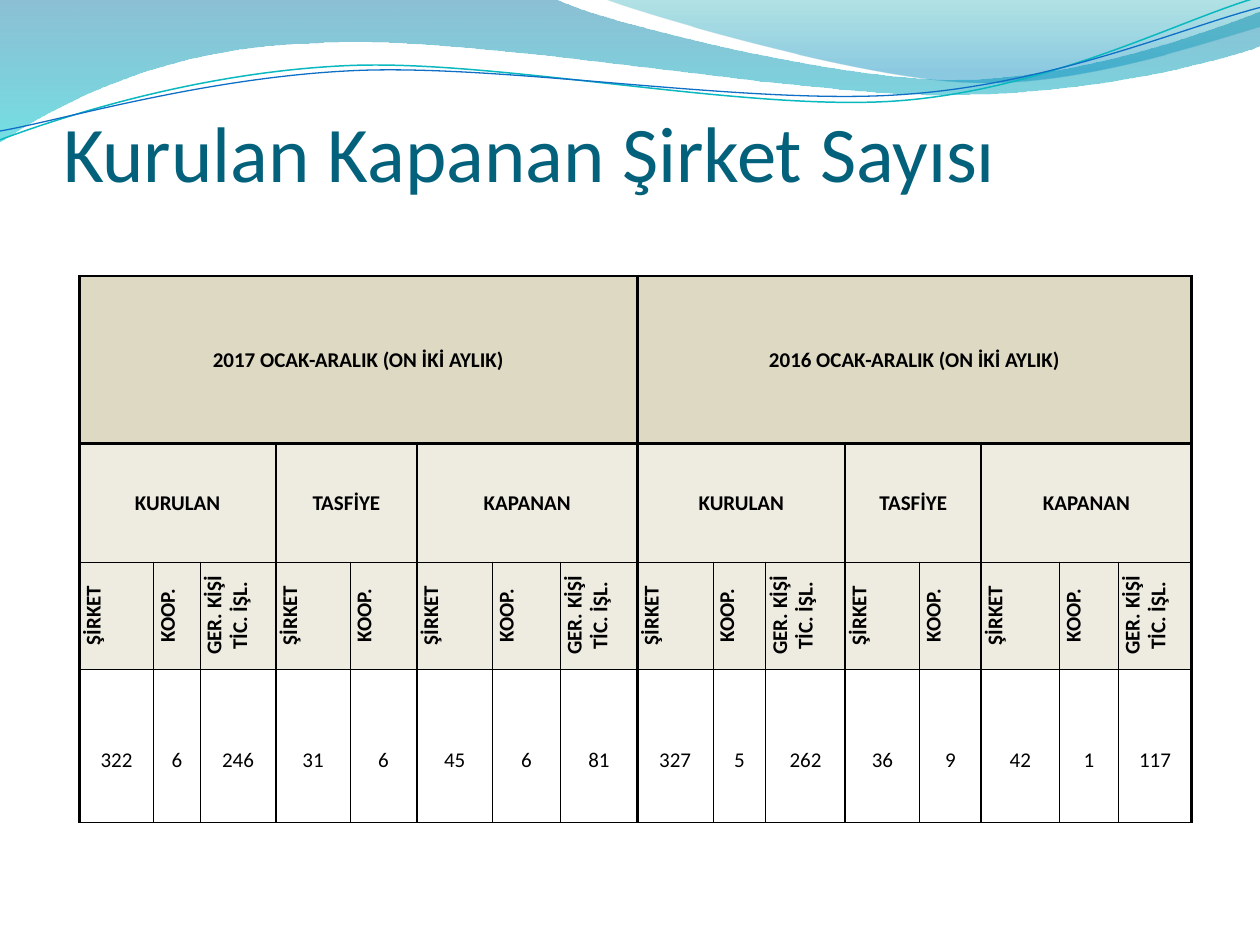
"""Build the slide on companies founded and closed in 2017 and 2016."""
from math import cos, radians, sin
from lxml.etree import SubElement
from pptx import Presentation
from pptx.dml.color import RGBColor
from pptx.enum.text import MSO_ANCHOR, MSO_AUTO_SIZE, PP_ALIGN
from pptx.oxml import parse_xml
from pptx.oxml.ns import nsdecls, qn
from pptx.util import Inches, Pt

COLORS = {
    "title": "04617B", "text": "000000", "border": "000000",
    "year": "DDD9C3", "header": "EEECE1", "value": "FFFFFF",
    "teal": "0AB8BF", "blue": "0F6FC6",
    "left_top": "0074A1", "left_bottom": "00C6CF",
    "right_top": "00A1A9", "right_bottom": "008BBF",
}
FONT = "Calibri"
LINE_WAVE_TILT = 2.7


def add_wave(slide, start, segments, tilt=0, center=(0, 0)):
    """Add a freeform from line ends (2 numbers) and Bezier curves (6 numbers)."""
    points = [start]
    for segment in segments:
        points += zip(segment[::2], segment[1::2])
    angle = radians(tilt)
    level_points = []
    for x, y in points:
        dx, dy = x - center[0], y - center[1]
        level_points.append((Inches(center[0] + dx * cos(angle) - dy * sin(angle)),
                             Inches(center[1] + dx * sin(angle) + dy * cos(angle))))
    builder = slide.shapes.build_freeform(*level_points[0])
    builder.add_line_segments(level_points[1:], close=len(segments[-1]) == 2)
    shape = builder.convert_to_shape()
    shape.shadow.inherit = False
    shape.rotation = -tilt
    steps = iter(list(shape._element.iter(qn("a:lnTo"))))
    for segment in segments:
        step = next(steps)
        if len(segment) == 6:
            curve = parse_xml(f'<a:cubicBezTo {nsdecls("a")}/>')
            step.addprevious(curve)
            for line in (step, next(steps), next(steps)):
                curve.append(line[0])
                line.getparent().remove(line)
    return shape


def format_cell(cell, text, fill, widths, bold=True):
    """Write one table cell with its fill and left, right, top and bottom borders."""
    cell.margin_left = cell.margin_right = cell.margin_top = Inches(0.01)
    cell.margin_bottom = 0
    cell.vertical_anchor = MSO_ANCHOR.MIDDLE
    cell.fill.solid()
    cell.fill.fore_color.rgb = RGBColor.from_string(COLORS[fill])
    paragraph = cell.text_frame.paragraphs[0]
    paragraph.alignment = PP_ALIGN.CENTER
    for index, line in enumerate(text.split("\n")):
        if index:
            paragraph.add_line_break()
        run = paragraph.add_run()
        run.text = line
        run.font.name = FONT
        run.font.size = Pt(12)
        run.font.bold = bold
        run.font.color.rgb = RGBColor.from_string(COLORS["text"])
    properties = cell._tc.get_or_add_tcPr()
    for index, (side, width) in enumerate(zip("LRTB", widths)):
        properties.insert(index, parse_xml(
            f'<a:ln{side} {nsdecls("a")} w="{Pt(width)}"><a:solidFill>'
            f'<a:srgbClr val="{COLORS["border"]}"/></a:solidFill></a:ln{side}>'))


presentation = Presentation()
presentation.slide_width = Inches(10)
presentation.slide_height = Inches(7.5)
slide = presentation.slides.add_slide(presentation.slide_layouts[5])

filled_waves = [
    ((0, 0), [(4.4, -0.01), (4.76, 0.17, 6.64, 0.63, 7.58, 0.63),
              (8.53, 0.63, 9.58, 0.26, 10, 0.09), (10.01, 0.36),
              (9.83, 0.44, 8.7, 0.76, 7.46, 0.75), (6.22, 0.75, 3.82, 0.28, 2.57, 0.34),
              (1.29, 0.36, 0.46, 0.83, -0.01, 1.13), (0, 0)],
     [("left_top", 0, 45), ("left_bottom", 1, 55)]),
    ((4.79, -0.01), [(5.09, 0.11, 6.82, 0.62, 7.69, 0.65),
                     (8.56, 0.69, 9.61, 0.32, 10, 0.21), (10, 0), (4.79, -0.01)],
     [("right_top", 0, 30), ("right_bottom", 0.8, 45)]),
]
for start, segments, stops in filled_waves:
    wave = add_wave(slide, start, segments)
    wave.line.fill.background()
    wave.fill.gradient()
    wave.fill.gradient_angle = 270
    for stop, (color, position, opacity) in zip(wave.fill.gradient_stops, stops):
        stop.position = position
        stop.color.rgb = RGBColor.from_string(COLORS[color])
    for element, (color, position, opacity) in zip(wave._element.iter(qn("a:srgbClr")), stops):
        SubElement(element, qn("a:alpha")).set("val", str(opacity * 1000))

line_waves = [
    ((0, 1.11), [(0.48, 0.93, 1.58, 0.57, 2.77, 0.52), (3.95, 0.47, 5.93, 0.89, 7.13, 0.8),
                 (8.33, 0.71, 9.38, 0.15, 9.98, -0.02)], (4.99, 0.58), "teal", 0.85),
    ((0, 1.04), [(0.47, 0.96, 1.64, 0.61, 2.83, 0.56), (4.03, 0.51, 5.97, 0.84, 7.17, 0.75),
                 (8.36, 0.67, 9.41, 0.21, 10, 0.06)], (5, 0.59), "blue", 0.75),
]
for start, segments, center, color, width in line_waves:
    wave = add_wave(slide, start, segments, LINE_WAVE_TILT, center)
    wave.fill.background()
    wave.line.color.rgb = RGBColor.from_string(COLORS[color])
    wave.line.width = Pt(width)

title = slide.shapes.title
title.left, title.top, title.width, title.height = map(Inches, (0.5, 0.78, 9.08, 0.79))
title_frame = title.text_frame
title_frame.auto_size = MSO_AUTO_SIZE.NONE
title_frame.word_wrap = True
title_frame.vertical_anchor = MSO_ANCHOR.BOTTOM
title_frame.margin_left = title_frame.margin_right = title_frame.margin_bottom = 0
title_frame.margin_top = Inches(0.05)
paragraph = title_frame.paragraphs[0]
paragraph.alignment = PP_ALIGN.LEFT
run = paragraph.add_run()
run.text = "Kurulan Kapanan Şirket Sayısı"
run.font.name = FONT
run.font.size = Pt(45)
run.font.color.rgb = RGBColor.from_string(COLORS["title"])
title._element.getparent().append(title._element)

years = ["2017 OCAK-ARALIK (ON İKİ AYLIK)", "2016 OCAK-ARALIK (ON İKİ AYLIK)"]
groups = [("KURULAN", 3), ("TASFİYE", 2), ("KAPANAN", 3)] * len(years)
kinds = ["ŞİRKET", "KOOP.", "GER. KİŞİ\nTİC. İŞL."]
values = [322, 6, 246, 31, 6, 45, 6, 81, 327, 5, 262, 36, 9, 42, 1, 117]
column_widths = [0.59, 0.37, 0.6, 0.59, 0.53, 0.6, 0.54, 0.61,
                 0.6, 0.42, 0.63, 0.59, 0.49, 0.62, 0.47, 0.58]
row_heights = [1.33, 0.94, 0.85, 1.22]

frame = slide.shapes.add_table(len(row_heights), len(column_widths), Inches(0.63), Inches(2.19),
                               Inches(sum(column_widths)), Inches(sum(row_heights)))
table = frame.table
table.first_row = table.horz_banding = False
for column, width in zip(table.columns, column_widths):
    column.width = Inches(width)
for row, height in zip(table.rows, row_heights):
    row.height = Inches(height)

year_span = len(values) // len(years)
for index, year in enumerate(years):
    first = index * year_span
    table.cell(0, first).merge(table.cell(0, first + year_span - 1))
    format_cell(table.cell(0, first), year, "year", (1.5, 1.5, 1.5, 1.5))

first = 0
for group, span in groups:
    table.cell(1, first).merge(table.cell(1, first + span - 1))
    format_cell(table.cell(1, first), group, "header", (1.5, 1.5, 1.5, 0.5))
    for offset in range(span):
        column = first + offset
        widths = (0.5 if offset else 1.5, 1.5 if offset == span - 1 else 0.5, 0.5, 0.5)
        kind_cell = table.cell(2, column)
        format_cell(kind_cell, kinds[offset], "header", widths)
        kind_cell._tc.get_or_add_tcPr().set("vert", "vert270")
        value_cell = table.cell(3, column)
        format_cell(value_cell, str(values[column]), "value", widths, bold=False)
        value_cell.vertical_anchor = MSO_ANCHOR.TOP
        value_cell.margin_top = Inches(0.62)
    first += span

presentation.save("out.pptx")
